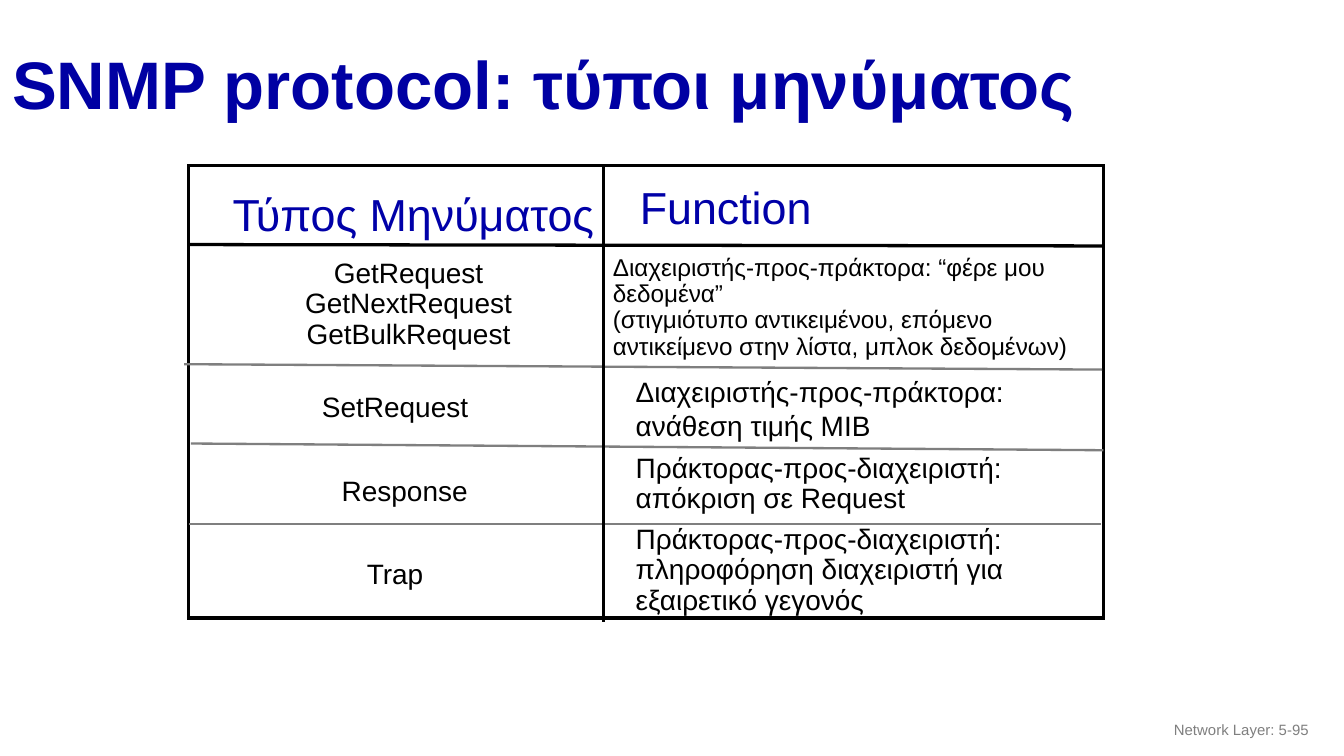
from lxml import etree
from pptx import Presentation
from pptx import util as u
from pptx.dml.color import RGBColor
from pptx.enum import shapes, text
from pptx.oxml import ns

TITLE_BLUE = RGBColor(0x00, 0x00, 0xA3)
HEADER_BLUE = RGBColor(0x00, 0x00, 0xA8)
BLACK = RGBColor(0x00, 0x00, 0x00)
GRAY = RGBColor(0x7F, 0x7F, 0x7F)
WHITE = RGBColor(0xFF, 0xFF, 0xFF)
LEFT, CENTER, RIGHT = text.PP_ALIGN.LEFT, text.PP_ALIGN.CENTER, text.PP_ALIGN.RIGHT
TOP, MIDDLE = text.MSO_ANCHOR.TOP, text.MSO_ANCHOR.MIDDLE
FIXED, GROW = text.MSO_AUTO_SIZE.NONE, text.MSO_AUTO_SIZE.SHAPE_TO_FIT_TEXT

presentation = Presentation()
presentation.slide_width = u.Inches(10)
presentation.slide_height = u.Inches(10 * 9 / 16)
slide = presentation.slides.add_slide(presentation.slide_layouts[6])


def add_text(box, lines, size, color=BLACK, align=LEFT, spacing=None, anchor=TOP, bold=False):
    shape = slide.shapes.add_textbox(*map(u.Inches, box))
    frame = shape.text_frame
    frame_format = {
        "word_wrap": True,
        "auto_size": GROW if anchor == TOP else FIXED,
        "vertical_anchor": anchor,
        "margin_left": u.Inches(0.07),
        "margin_right": u.Inches(0.07),
        "margin_top": u.Inches(0.04),
        "margin_bottom": u.Inches(0.04),
    }
    for name, value in frame_format.items():
        setattr(frame, name, value)
    frame.text = lines
    for paragraph in frame.paragraphs:
        paragraph.alignment = align
        paragraph.line_spacing = spacing
        font = paragraph.runs[0].font
        for name, value in {"name": "Arial", "size": u.Pt(size), "bold": bold}.items():
            setattr(font, name, value)
        font.color.rgb = color


add_text((0.02, 0.29, 8.62, 0.73), "SNMP protocol: τύποι μηνύματος", 36, TITLE_BLUE,
         spacing=0.9, anchor=MIDDLE, bold=True)
add_text((7.56, 5.28, 2.25, 0.3), "Network Layer: 5-95", 8, GRAY, RIGHT, anchor=MIDDLE)

frame_shape = slide.shapes.add_shape(
    shapes.MSO_SHAPE.RECTANGLE, *map(u.Inches, (1.4, 1.23, 6.81, 3.37)))
frame_shape.shadow.inherit = False
frame_shape.fill.solid()
frame_shape.fill.fore_color.rgb = WHITE
frame_shape.line.color.rgb = BLACK
frame_shape.line.width = u.Pt(1.75)
outline = frame_shape.element.spPr.find(ns.qn("a:ln"))
etree.SubElement(outline, ns.qn("a:miter"), lim="800000")

headers = [
    ((1.4, 1.35, 3.09, 0.48), "Τύπος Μηνύματος", RIGHT),
    ((4.69, 1.3, 2.98, 0.48), "Function", LEFT),
]
for box, label, align in headers:
    add_text(box, label, 24, HEADER_BLUE, align)

message_types = [
    ((2.04, 1.89, 2, 0.76), "GetRequest\nGetNextRequest\nGetBulkRequest", CENTER, 0.9),
    ((1.82, 2.86, 2.24, 0.33), "SetRequest", CENTER, None),
    ((2.33, 3.48, 1.22, 0.33), "Response", RIGHT, None),
    ((2.36, 4.1, 1.16, 0.33), "Trap", CENTER, None),
]
for box, label, align, spacing in message_types:
    add_text(box, label, 15, align=align, spacing=spacing)

functions = [
    ((4.49, 1.86, 3.72, 0.86),
     "Διαχειριστής-προς-πράκτορα: “φέρε μου δεδομένα”\n"
     "(στιγμιότυπο αντικειμένου, επόμενο αντικείμενο στην λίστα, μπλοκ δεδομένων)", 13, 0.9),
    ((4.66, 2.75, 3.24, 0.58),
     "Διαχειριστής-προς-πράκτορα: ανάθεση τιμής MIB", 15, None),
    ((4.66, 3.34, 3.39, 0.53),
     "Πράκτορας-προς-διαχειριστή: απόκριση σε Request", 15, 0.9),
    ((4.66, 3.87, 3.39, 0.76),
     "Πράκτορας-προς-διαχειριστή: πληροφόρηση διαχειριστή για εξαιρετικό γεγονός", 15, 0.9),
]
for box, description, size, spacing in functions:
    add_text(box, description, size, spacing=spacing)

rules = [
    ((1.4, 1.82, 8.2, 1.83), BLACK, 1.75),
    ((1.37, 2.71, 8.2, 2.75), GRAY, 1.25),
    ((1.42, 3.3, 8.21, 3.35), GRAY, 1.25),
    ((1.41, 3.9, 8.19, 3.9), GRAY, 0.75),
    ((4.49, 1.23, 4.49, 4.63), BLACK, 2),
]
for ends, color, width in rules:
    rule = slide.shapes.add_connector(shapes.MSO_CONNECTOR.STRAIGHT, *map(u.Inches, ends))
    rule.line.color.rgb = color
    rule.line.width = u.Pt(width)
    etree.SubElement(rule.element.spPr, ns.qn("a:effectLst"))

presentation.save("out.pptx")
